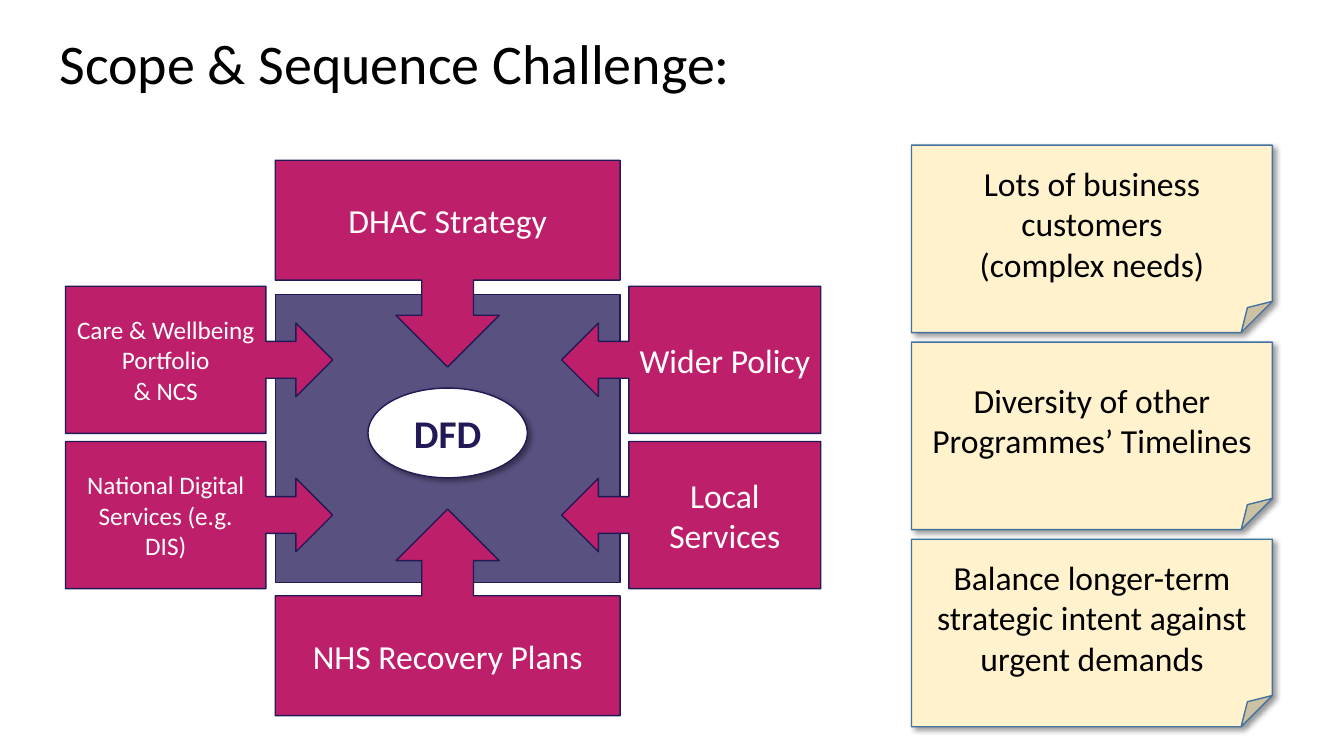
from lxml import etree
from pptx import Presentation
from pptx.dml.color import RGBColor
from pptx.enum.shapes import MSO_SHAPE as SHAPE
from pptx.enum.text import MSO_ANCHOR as ANCHOR, PP_ALIGN as ALIGN
from pptx.oxml import parse_xml
from pptx.oxml.ns import nsdecls, qn
from pptx.util import Inches, Pt

WHITE = RGBColor(0xFF, 0xFF, 0xFF)
BLACK = RGBColor(0, 0, 0)
NAVY = RGBColor(0x22, 0x19, 0x57)
MAGENTA = RGBColor(0xBE, 0x1F, 0x6A)
CREAM = RGBColor(0xFF, 0xF2, 0xCC)
BLUE = RGBColor(0x43, 0x73, 0x9E)
FONT = "Calibri"

# kind, left, top, width, height, body share, text size, side inset, text
CALLOUTS = [
    (SHAPE.DOWN_ARROW_CALLOUT, 2.73, 1.59, 3.42, 2.05, 0.58, 24, 0.1,
     "DHAC Strategy"),
    (SHAPE.UP_ARROW_CALLOUT, 2.73, 5.05, 3.42, 2.05, 0.58, 24, 0.1,
     "NHS Recovery Plans"),
    (SHAPE.RIGHT_ARROW_CALLOUT, 0.65, 2.84, 2.65, 1.46, 0.75, 18, 0.1,
     "Care & Wellbeing Portfolio\n& NCS"),
    (SHAPE.RIGHT_ARROW_CALLOUT, 0.65, 4.38, 2.65, 1.46, 0.75, 18, 0.1,
     "National Digital Services (e.g. DIS)"),
    (SHAPE.LEFT_ARROW_CALLOUT, 5.57, 2.84, 2.57, 1.46, 0.74, 24, 0.05,
     "Wider Policy"),
    (SHAPE.LEFT_ARROW_CALLOUT, 5.57, 4.38, 2.57, 1.46, 0.74, 24, 0.05,
     "Local Services"),
]
NOTES = [
    "Lots of business customers\v(complex needs)",
    "Diversity of other Programmes’ Timelines",
    "Balance longer-term strategic intent against urgent demands",
]
NOTE_TOP, NOTE_STEP = 1.44, 1.955


def add_box(shapes, kind, left, top, width, height, fill, line):
    s = shapes.add_shape(kind, Inches(left), Inches(top),
                         Inches(width), Inches(height))
    s.shadow.inherit = False
    s.fill.solid()
    s.fill.fore_color.rgb = fill
    s.line.color.rgb = line
    s.line.width = Pt(1)
    return s


def style_text(tf, size, color, align=ALIGN.CENTER, bold=False):
    for p in tf.paragraphs:
        p.alignment = align
        for r in p.runs:
            r.font.name = FONT
            r.font.size = Pt(size)
            r.font.bold = bold
            r.font.color.rgb = color


def set_text(s, text, size, color, bold=False, inset=0.1):
    tf = s.text_frame
    tf.word_wrap = True
    tf.vertical_anchor = ANCHOR.MIDDLE
    tf.margin_left = tf.margin_right = Inches(inset)
    tf.text = text
    style_text(tf, size, color, bold=bold)


def add_shadow(s):
    effects = s._element.spPr.find(qn("a:effectLst"))
    effects.append(parse_xml(
        f'<a:outerShdw {nsdecls("a")} blurRad="{Pt(4)}" dist="{Pt(3)}" '
        'dir="2700000" algn="tl" rotWithShape="0">'
        '<a:srgbClr val="000000"><a:alpha val="40000"/></a:srgbClr>'
        '</a:outerShdw>'))


def set_opacity(s, percent):
    color = s._element.spPr.find(qn("a:solidFill")).find(qn("a:srgbClr"))
    etree.SubElement(color, qn("a:alpha")).set("val", str(percent * 1000))


def add_title(slide, text):
    s = slide.shapes.title
    s.left, s.top = Inches(0.49), Inches(0.31)
    s.width, s.height = Inches(7.9), Inches(0.94)
    tf = s.text_frame
    tf.vertical_anchor = ANCHOR.TOP
    tf.text = text
    tf.paragraphs[0].line_spacing = 0.9
    style_text(tf, 40, BLACK, ALIGN.LEFT)


def add_callout(shapes, kind, left, top, width, height, body, size, inset,
                text):
    s = add_box(shapes, kind, left, top, width, height, MAGENTA, NAVY)
    for i, value in enumerate((0.25, 0.25, 0.25, body)):
        s.adjustments[i] = value
    set_text(s, text, size, WHITE, inset=inset)


def add_diagram(slide):
    shapes = slide.shapes.add_group_shape().shapes
    core = add_box(shapes, SHAPE.RECTANGLE, 2.73, 2.92, 3.42, 2.86, NAVY, NAVY)
    set_opacity(core, 75)
    for callout in CALLOUTS:
        add_callout(shapes, *callout)
    hub = add_box(shapes, SHAPE.OVAL, 3.65, 3.85, 1.58, 0.89, WHITE, NAVY)
    add_shadow(hub)
    set_text(hub, "DFD", 28, NAVY, bold=True)


def add_notes_column(slide):
    for i, text in enumerate(NOTES):
        s = add_box(slide.shapes, SHAPE.FOLDED_CORNER, 9.04,
                    NOTE_TOP + i * NOTE_STEP, 3.58, 1.86, CREAM, BLUE)
        add_shadow(s)
        set_text(s, text, 24, BLACK)


def main():
    prs = Presentation()
    prs.slide_width, prs.slide_height = Inches(13.33), Inches(7.5)
    slide = prs.slides.add_slide(prs.slide_layouts[5])
    add_title(slide, "Scope & Sequence Challenge:")
    add_diagram(slide)
    add_notes_column(slide)
    prs.save("out.pptx")


if __name__ == "__main__":
    main()
